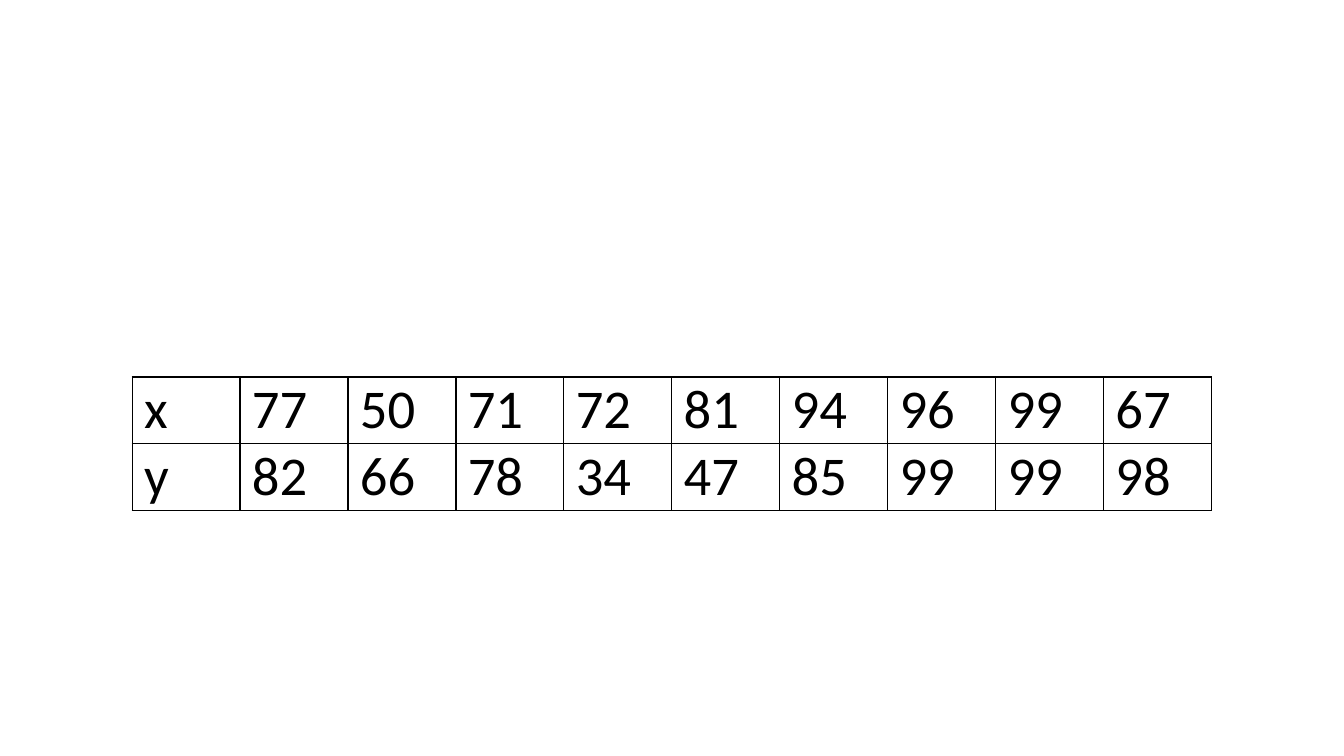
from dataclasses import dataclass

from lxml.etree import SubElement
from pptx import Presentation
from pptx.dml.color import RGBColor
from pptx.enum.text import MSO_ANCHOR as Anchor, PP_ALIGN as Align
from pptx.oxml.ns import qn
from pptx.util import Cm, Pt


@dataclass(frozen=True)
class Theme:
    ink: str = "000000"
    font: str = "Calibri"
    text_size: int = 39
    space_before: int = 12
    border: int = 1


theme = Theme()


def add_borders(cell):
    properties = cell._tc.get_or_add_tcPr()
    for side in ("lnL", "lnR", "lnT", "lnB"):
        line = SubElement(properties, qn(f"a:{side}"), w=str(Pt(theme.border)))
        fill = SubElement(line, qn("a:solidFill"))
        SubElement(fill, qn("a:srgbClr"), val=theme.ink)


# Deck and page
deck = Presentation()
deck.slide_width, deck.slide_height = Cm(33.87), Cm(19.05)
page = deck.slides.add_slide(deck.slide_layouts[6])

# Paired values
series = [
    ("x", 77, 50, 71, 72, 81, 94, 96, 99, 67),
    ("y", 82, 66, 78, 34, 47, 85, 99, 99, 98),
]

# Table grid
column_width, row_height = Cm(2.72), Cm(1.65)
row_count, column_count = len(series), len(series[0])
table = page.shapes.add_table(
    row_count, column_count, Cm(3.33), Cm(9.5),
    column_width * column_count, row_height * row_count,
).table
table.first_row = table.horz_banding = False
for column in table.columns:
    column.width = column_width
for row in table.rows:
    row.height = row_height

# Cells
for row, values in zip(table.rows, series):
    for cell, value in zip(row.cells, values):
        cell.margin_left = cell.margin_right = Cm(0.3)
        cell.margin_top = cell.margin_bottom = Cm(0)
        cell.vertical_anchor = Anchor.TOP
        add_borders(cell)
        cell.fill.background()
        para = cell.text_frame.paragraphs[0]
        para.alignment = Align.JUSTIFY
        para.space_before = Pt(theme.space_before)
        span = para.add_run()
        span.text = str(value)
        span.font.name = theme.font
        span.font.size = Pt(theme.text_size)
        span.font.color.rgb = RGBColor.from_string(theme.ink)

deck.save("out.pptx")
